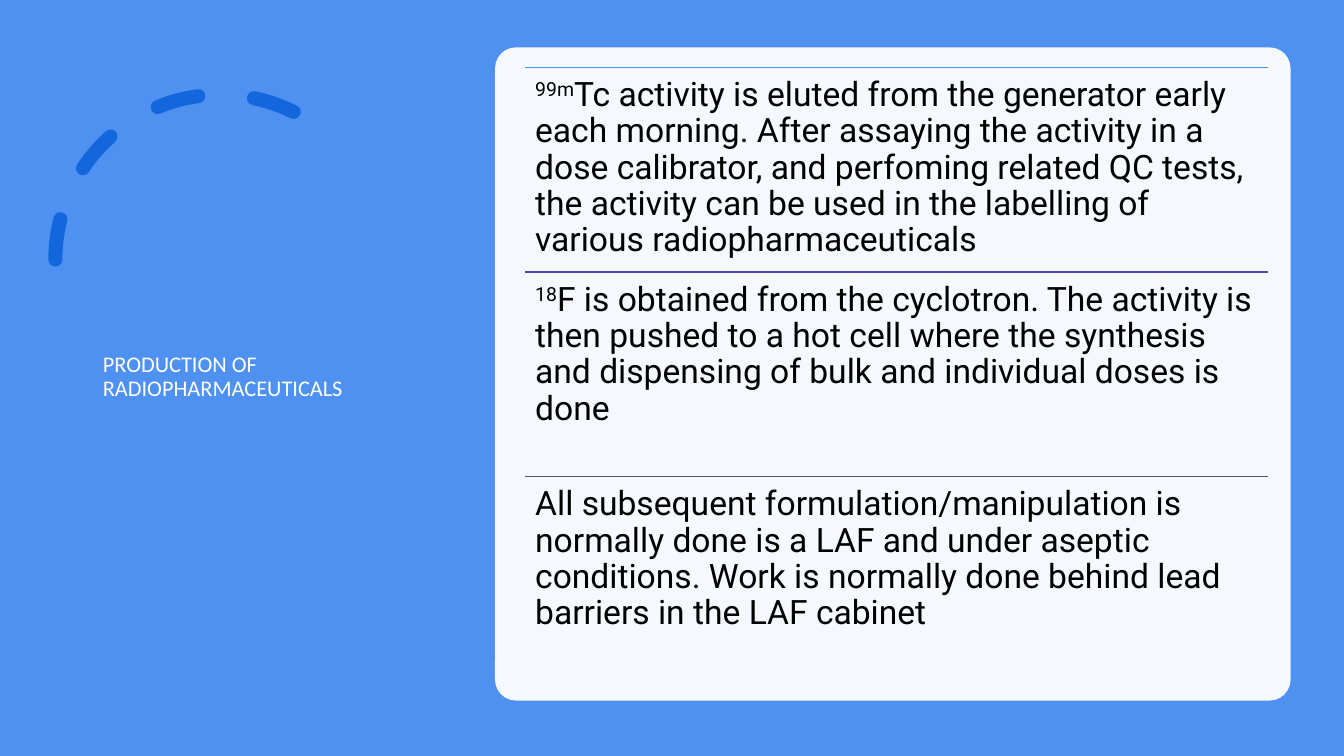
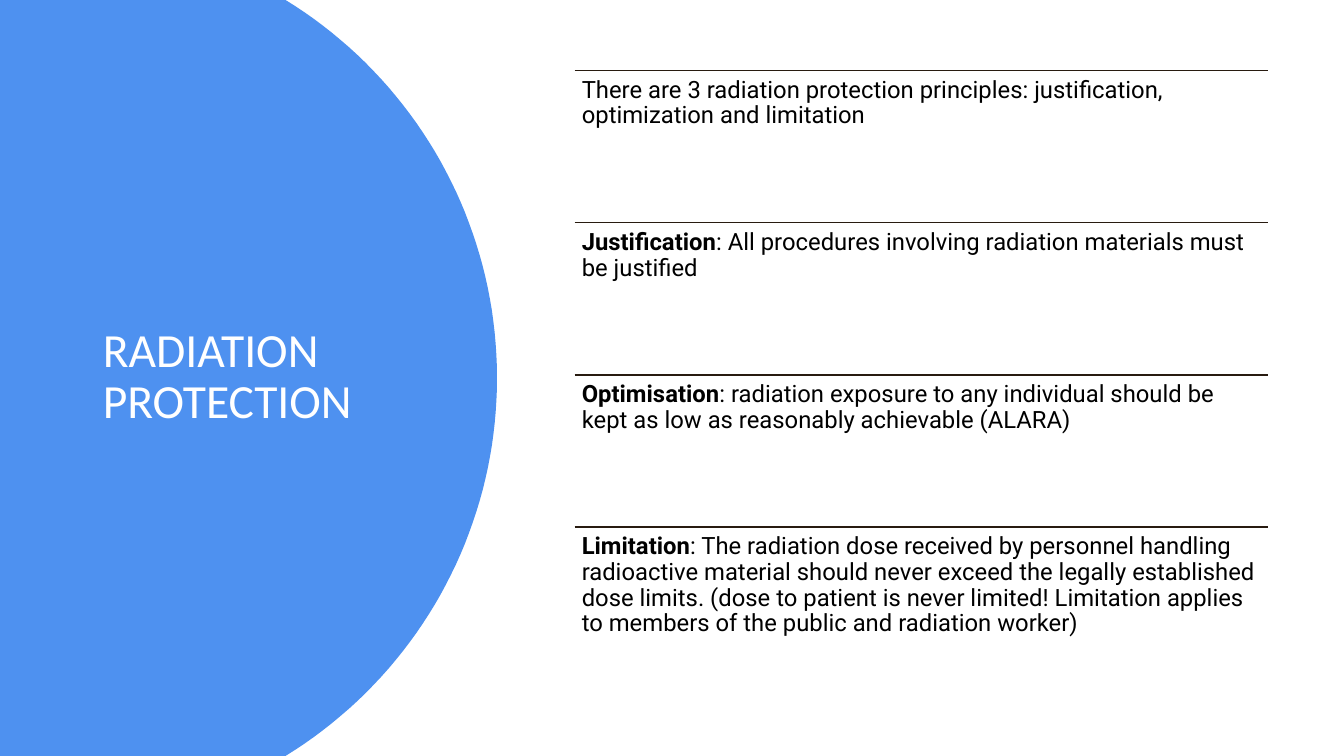
import math

from pptx import Presentation
from pptx.dml.color import RGBColor
from pptx.enum import dml, shapes, text
from pptx.oxml.ns import qn
from pptx.util import Inches, Pt
from lxml import etree

COLORS = {
    "blue": "4E91F0", "deep_blue": "1366DC", "white": "FFFFFF", "black": "000000",
    "violet": "5043B5", "slate": "5B5260", "brown": "281B10",
}
TITLE_FONT, BODY_FONT = "Calibri", "Roboto"
SLIDE_W, SLIDE_H = 13.33, 7.5
RIGHT_EDGE = 12.58


def rgb(name):
    return RGBColor.from_string(COLORS[name])


def write(frame, parts, font=BODY_FONT, size=18, color="black", inset=None,
          anchor=text.MSO_ANCHOR.TOP):
    """Fill a frame with one paragraph; parts are (words, style) with style "", "bold" or "super"."""
    frame.word_wrap = True
    frame.auto_size = text.MSO_AUTO_SIZE.NONE
    frame.vertical_anchor = anchor
    if inset is not None:
        frame.margin_left = frame.margin_right = Inches(inset)
        frame.margin_top = frame.margin_bottom = Inches(inset)
    paragraph = frame.paragraphs[0]
    paragraph.alignment = text.PP_ALIGN.LEFT
    paragraph.line_spacing = 0.9
    for words, style in parts:
        run = paragraph.add_run()
        run.text = words
        run.font.name, run.font.size = font, Pt(size)
        run.font.color.rgb = rgb(color)
        run.font.bold = style == "bold"
        if style == "super":
            run.font._element.set("baseline", "30000")


class Deck:
    def __init__(self):
        self.prs = Presentation()
        self.prs.slide_width, self.prs.slide_height = Inches(SLIDE_W), Inches(SLIDE_H)
        self.slide = None

    def new_slide(self, background):
        self.slide = self.prs.slides.add_slide(self.prs.slide_layouts[5])
        fill = self.slide.background.fill
        fill.solid()
        fill.fore_color.rgb = rgb(background)

    def title(self, words, size):
        heading = self.slide.shapes.title
        heading.left, heading.top = Inches(0.92), Inches(0.7)
        heading.width, heading.height = Inches(3.23), Inches(6.09)
        write(heading.text_frame, [(words, "")], font=TITLE_FONT, size=size,
              color="white", anchor=text.MSO_ANCHOR.MIDDLE)

    def paint(self, shape, color):
        shape.shadow.inherit = False
        shape.fill.solid()
        shape.fill.fore_color.rgb = rgb(color)
        shape.line.fill.background()

    def dashed_arc(self, left, top, size):
        arc = self.slide.shapes.add_shape(
            shapes.MSO_SHAPE.ARC, Inches(left), Inches(top), Inches(size), Inches(size))
        arc.shadow.inherit = False
        arc.adjustments[0], arc.adjustments[1] = 146.13, 0
        arc._element.spPr.find(qn("a:xfrm")).set("flipH", "1")
        arc.fill.background()
        arc.line.color.rgb = rgb("deep_blue")
        arc.line.width = Pt(10)
        arc.line.dash_style = dml.MSO_LINE.DASH
        arc._element.spPr.find(qn("a:ln")).set("cap", "rnd")

    def panel(self, left, top, width, height):
        """Draw a rounded white card that is 95 % opaque."""
        card = self.slide.shapes.add_shape(
            shapes.MSO_SHAPE.ROUNDED_RECTANGLE,
            Inches(left), Inches(top), Inches(width), Inches(height))
        card.adjustments[0] = 0.032
        self.paint(card, "white")
        tint = card._element.spPr.find(qn("a:solidFill"))[0]
        etree.SubElement(tint, qn("a:alpha")).set("val", "95000")

    def round_band(self, right, radius):
        """Fill the left of the slide up to a circular edge."""
        reach = math.asin(SLIDE_H / 2 / radius)
        steps = 80
        angles = [reach * (2 * i / steps - 1) for i in range(steps + 1)]
        edge = [(right - radius + radius * math.cos(a),
                 SLIDE_H / 2 + radius * math.sin(a)) for a in angles]
        outline = self.slide.shapes.build_freeform(0, 0, scale=Inches(1) / 1000)
        outline.add_line_segments(
            [(x * 1000, y * 1000) for x, y in edge] + [(0, SLIDE_H * 1000)])
        self.paint(outline.convert_to_shape(), "blue")

    def rule(self, left, top, color):
        line = self.slide.shapes.add_connector(
            shapes.MSO_CONNECTOR.STRAIGHT,
            Inches(left), Inches(top), Inches(RIGHT_EDGE), Inches(top))
        line.line.color.rgb = rgb(color)
        line.line.width = Pt(1)
        etree.SubElement(line._element.spPr, qn("a:effectLst"))

    def ruled_list(self, entries, left, top, pitch, size, inset):
        """Stack (rule colour, text parts) entries at equal pitch."""
        for row, (color, parts) in enumerate(entries):
            y = top + row * pitch
            self.rule(left, y, color)
            box = self.slide.shapes.add_textbox(
                Inches(left), Inches(y), Inches(RIGHT_EDGE - left), Inches(pitch))
            write(box.text_frame, parts, size=size, inset=inset)


PRODUCTION = [
    ("blue", [("99m", "super"),
              ("Tc activity is eluted from the generator early each morning. After assaying "
               "the activity in a dose calibrator, and perfoming related QC tests, the activity "
               "can be used in the labelling of various radiopharmaceuticals", "")]),
    ("violet", [("18", "super"),
                ("F is obtained from the cyclotron. The activity is then pushed to a hot cell "
                 "where the synthesis and dispensing of bulk and individual doses is done", "")]),
    ("slate", [("All subsequent formulation/manipulation is normally done is a LAF and under "
                "aseptic conditions. Work is normally done behind lead barriers in the LAF "
                "cabinet", "")]),
]
PROTECTION = [
    ("brown", [("There are 3 radiation protection principles: justification, optimization "
                "and limitation", "")]),
    ("brown", [("Justification", "bold"),
               (": All procedures involving radiation materials must be justified", "")]),
    ("brown", [("Optimisation", "bold"),
               (": radiation exposure to any individual should be kept as low as reasonably "
                "achievable (ALARA)", "")]),
    ("brown", [("Limitation", "bold"),
               (": The radiation dose received by personnel handling radioactive material "
                "should never exceed the legally established dose limits. (dose to patient is "
                "never limited! Limitation applies to members of the public and radiation "
                "worker)", "")]),
]


def main():
    deck = Deck()

    deck.new_slide("blue")
    deck.dashed_arc(0.55, 0.94, 3.27)
    deck.title("PRODUCTION OF RADIOPHARMACEUTICALS", 16)
    deck.panel(4.91, 0.47, 7.89, 6.48)
    deck.ruled_list(PRODUCTION, left=5.21, top=0.67, pitch=2.03, size=24, inset=0.1)

    deck.new_slide("white")
    deck.round_band(right=4.93, radius=4.4)
    # The band is drawn after the title placeholder, so the title is lifted above it.
    deck.slide.shapes._spTree.append(deck.slide.shapes.title._element)
    deck.title("RADIATION PROTECTION", 34)
    deck.ruled_list(PROTECTION, left=5.7, top=0.7, pitch=1.51, size=17, inset=0.07)

    deck.prs.save("out.pptx")


if __name__ == "__main__":
    main()
